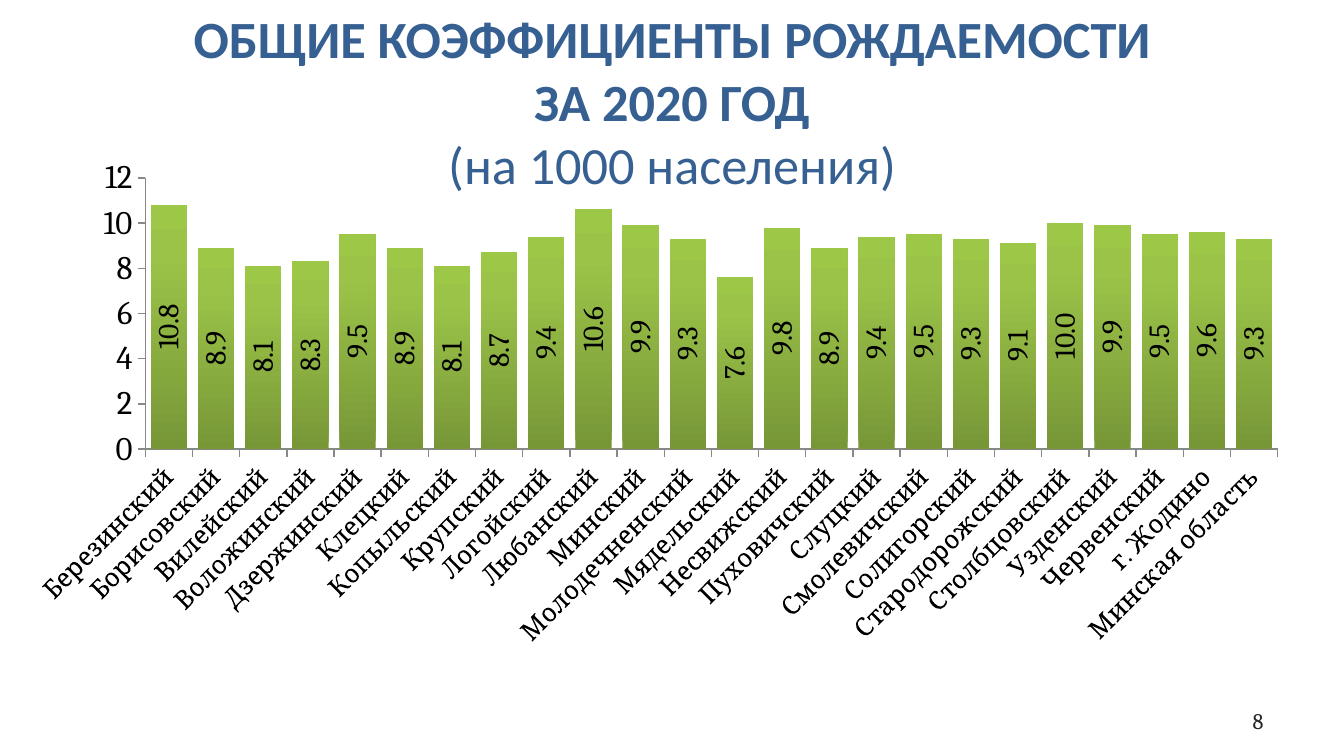
import pptx
import pptx.util
import pptx.chart.data
import pptx.dml.color
import pptx.enum.chart
import pptx.enum.text
import pptx.oxml

COLORS = {"title": "376092", "text": "000000", "page": "262626", "axis": "888888",
          "low": "779737", "mid": "9BC348", "top": "9DC746"}
RATES = {
    "Березинский": 10.8, "Борисовский": 8.9, "Вилейский": 8.1, "Воложинский": 8.3,
    "Дзержинский": 9.5, "Клецкий": 8.9, "Копыльский": 8.1, "Крупский": 8.7,
    "Логойский": 9.4, "Любанский": 10.6, "Минский": 9.9, "Молодечненский": 9.3,
    "Мядельский": 7.6, "Несвижский": 9.8, "Пуховичский": 8.9, "Слуцкий": 9.4,
    "Смолевичский": 9.5, "Солигорский": 9.3, "Стародорожский": 9.1,
    "Столбцовский": 10, "Узденский": 9.9, "Червенский": 9.5, "г. Жодино": 9.6,
    "Минская область": 9.3,
}
SPACES = ('xmlns:c="http://schemas.openxmlformats.org/drawingml/2006/chart" '
          'xmlns:a="http://schemas.openxmlformats.org/drawingml/2006/main"')


def style(font, size, color, name="Cambria", bold=False):
    """Set the face, size, colour and weight of a font."""
    font.name, font.size, font.bold = name, pptx.util.Pt(size), bold
    font.color.rgb = pptx.dml.color.RGBColor.from_string(COLORS[color])


def add_box(slide, box, align):
    """Add a wrapped, middle-anchored text box and return its paragraph."""
    frame = slide.shapes.add_textbox(*map(pptx.util.Inches, box)).text_frame
    frame.word_wrap = True
    frame.vertical_anchor = pptx.enum.text.MSO_ANCHOR.MIDDLE
    para = frame.paragraphs[0]
    para.alignment = align
    return para


def add_title(slide, box):
    """Add the heading with its unit line."""
    para = add_box(slide, box, pptx.enum.text.PP_ALIGN.CENTER)
    lines = [("ОБЩИЕ КОЭФФИЦИЕНТЫ РОЖДАЕМОСТИ", True), ("ЗА 2020 ГОД", True),
             ("(на 1000 населения)", False)]
    for num, (text, bold) in enumerate(lines):
        if num:
            para.add_line_break()
        run = para.add_run()
        run.text = text
        style(run.font, 28, "title", "Calibri", bold)


def add_page(slide, box):
    """Add the page number."""
    run = add_box(slide, box, pptx.enum.text.PP_ALIGN.RIGHT).add_run()
    run.text = "8"
    style(run.font, 12, "page")


def turn(part, angle):
    """Rotate the text of a chart part by an angle in degrees."""
    body = part._element.find(".//" + pptx.oxml.ns.qn("a:bodyPr"))
    body.set("rot", str(angle * 60000))
    body.set("vert", "horz")


def set_plot(chart, box):
    """Fix the inner plot area at fractions of the chart."""
    area = chart._chartSpace.chart.plotArea
    for old in area.findall(pptx.oxml.ns.qn("c:layout")):
        area.remove(old)
    modes = "".join(f'<c:{key}Mode val="edge"/>' for key in "xy")
    sides = "".join(f'<c:{key} val="{val}"/>' for key, val in zip("xywh", box))
    area.insert(0, pptx.oxml.parse_xml(
        f'<c:layout {SPACES}><c:manualLayout><c:layoutTarget val="inner"/>'
        f'{modes}{sides}</c:manualLayout></c:layout>'))


def fill_bars(series):
    """Give the bars an upward gradient."""
    stops = "".join(
        f'<a:gs pos="{pos * 1000}"><a:srgbClr val="{COLORS[key]}"/></a:gs>'
        for pos, key in ((0, "low"), (80, "mid"), (100, "top")))
    props = series._element.get_or_add_spPr()
    props.insert(0, pptx.oxml.parse_xml(
        f'<a:gradFill {SPACES} rotWithShape="1"><a:gsLst>{stops}</a:gsLst>'
        '<a:lin ang="16200000" scaled="0"/></a:gradFill>'))


def add_rates(slide, box):
    """Add the column chart of birth rates by district."""
    enums = pptx.enum.chart
    data = pptx.chart.data.CategoryChartData(number_format="#,##0.0")
    data.categories = list(RATES)
    data.add_series("Series 1", list(RATES.values()))
    chart = slide.shapes.add_chart(
        enums.XL_CHART_TYPE.COLUMN_CLUSTERED, *map(pptx.util.Inches, box), data).chart
    chart.has_legend = chart.has_title = False
    style(chart.font, 18, "text")
    set_plot(chart, (0.062, 0.017, 0.931, 0.474))

    for axis, size in ((chart.category_axis, 14), (chart.value_axis, 18)):
        axis.has_major_gridlines = False
        axis.major_tick_mark = enums.XL_TICK_MARK.OUTSIDE
        style(axis.tick_labels.font, size, "text")
        axis.format.line.width = pptx.util.Pt(0.75)
        axis.format.line.color.rgb = pptx.dml.color.RGBColor.from_string(COLORS["axis"])
    turn(chart.category_axis, -45)
    scale = chart.value_axis
    scale.minimum_scale, scale.maximum_scale, scale.major_unit = 0, 12, 2
    scale.tick_labels.number_format = "0"
    scale.tick_labels.number_format_is_linked = False

    plot = chart.plots[0]
    plot.gap_width, plot.overlap, plot.vary_by_categories = 30, 100, False
    fill_bars(plot.series[0])
    labels = plot.series[0].data_labels
    labels.show_value = True
    labels.position = enums.XL_LABEL_POSITION.CENTER
    labels.number_format = "#,##0.0"
    labels.number_format_is_linked = False
    style(labels.font, 16, "text")
    turn(labels, -90)


def main():
    """Build and save the slide."""
    deck = pptx.Presentation()
    deck.slide_width = pptx.util.Inches(10)
    deck.slide_height = pptx.util.Inches(5.625)
    slide = deck.slides.add_slide(deck.slide_layouts[6])
    add_title(slide, (0, 0.29, 10, 0.92))
    add_rates(slide, (0.28, 1.18, 9.29, 4.33))
    add_page(slide, (7.17, 5.21, 2.33, 0.3))
    deck.save("out.pptx")


if __name__ == "__main__":
    main()
